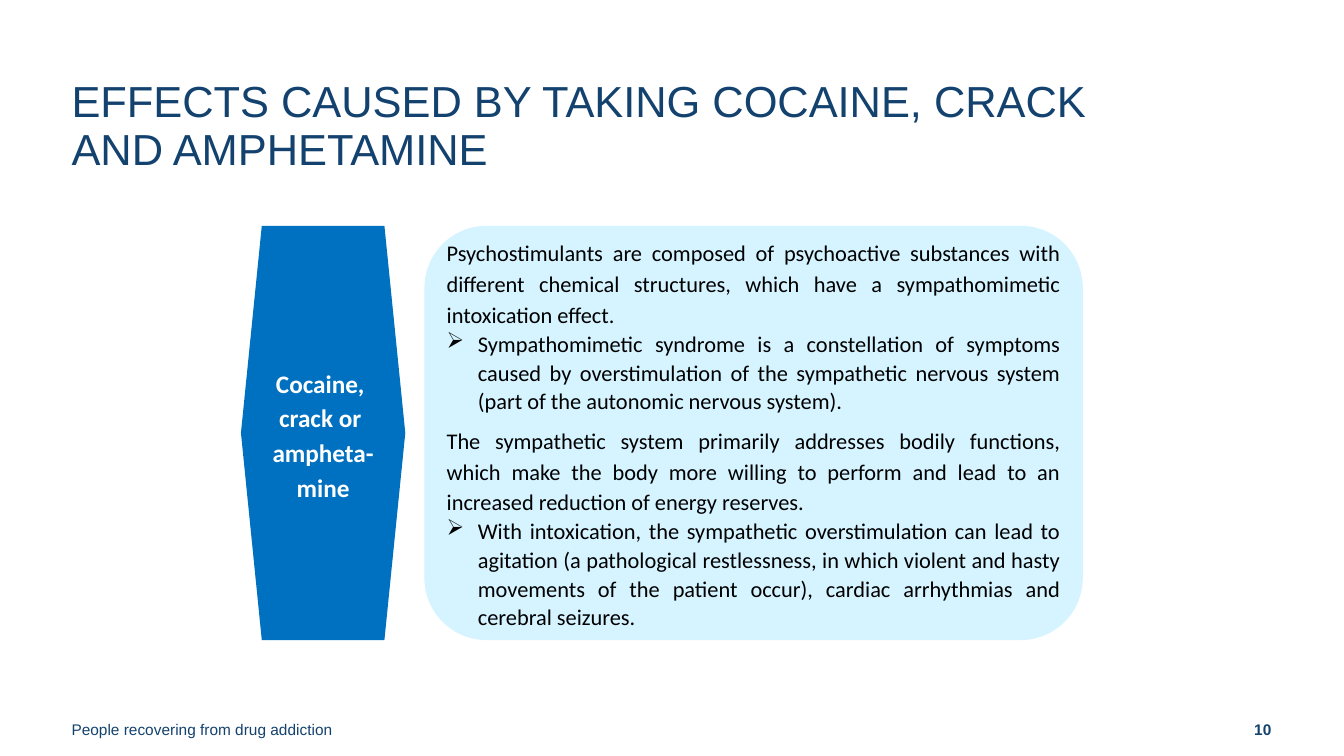
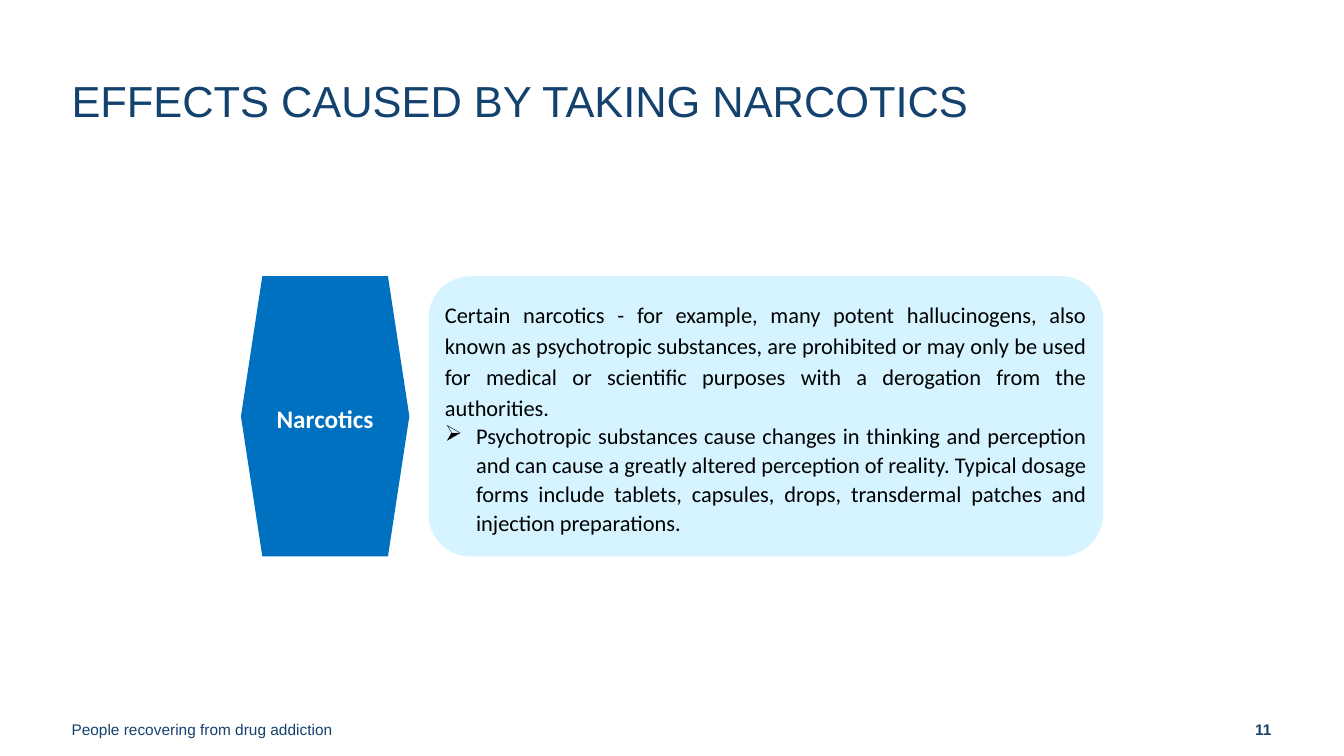
import dataclasses

import pptx
import pptx.dml.color
import pptx.enum.shapes
import pptx.enum.text
import pptx.util
from lxml import etree

Inches = pptx.util.Inches
Pt = pptx.util.Pt
Align = pptx.enum.text.PP_ALIGN
Anchor = pptx.enum.text.MSO_ANCHOR
Shape = pptx.enum.shapes.MSO_SHAPE


@dataclasses.dataclass(frozen=True)
class Theme:
    navy: str = "13426F"
    blue: str = "0070C0"
    pale_blue: str = "D5F4FF"
    white: str = "FFFFFF"
    black: str = "000000"
    heading_font: str = "Arial"
    body_font: str = "Calibri"
    title_size: int = 31
    label_size: int = 18
    body_size: int = 16
    footer_size: int = 11


THEME = Theme()
FOOTER = "People recovering from drug addiction"
TOPIC_LEFT = 2.39
PANEL_GAP = 0.19


def rgb(color):
    return pptx.dml.color.RGBColor.from_string(color)


def write(para, text, *, size, color, font, bold=False, align=Align.LEFT,
          spacing=1.0, before=0, bullet=None, indent=0.31):
    """Fill a paragraph; a vertical tab in the text is a line break."""
    para.text = text
    para.alignment = align
    para.line_spacing = spacing
    if before:
        para.space_before = Pt(before)
    if bullet:
        props = para._p.get_or_add_pPr()
        props.set("marL", str(Inches(indent)))
        props.set("indent", str(-Inches(indent)))
        mark = etree.SubElement(props, pptx.oxml.ns.qn("a:buChar"))
        mark.set("char", bullet)
    for span in para.runs:
        span.font.name = font
        span.font.size = Pt(size)
        span.font.bold = bold
        span.font.color.rgb = rgb(color)


class Builder:
    def __init__(self, theme):
        self.theme = theme
        self.deck = pptx.Presentation()
        self.deck.slide_width = Inches(13.33)
        self.deck.slide_height = Inches(7.5)
        self.page = None

    def frame(self, box, anchor, insets):
        """Set up the text frame of a box; insets run left, top, right, bottom."""
        frame = box.text_frame
        frame.word_wrap = True
        frame.auto_size = pptx.enum.text.MSO_AUTO_SIZE.NONE
        frame.vertical_anchor = anchor
        (frame.margin_left, frame.margin_top,
         frame.margin_right, frame.margin_bottom) = map(Inches, insets)
        return frame

    def start_page(self, title, number):
        self.page = self.deck.slides.add_slide(self.deck.slide_layouts[5])
        self.footer(FOOTER, 0, 4.5, (0.71, 0.05, 0, 0.16))
        self.footer(str(number), 10.32, 3, (0, 0.05, 0.71, 0.16),
                    bold=True, align=Align.RIGHT)
        self.title(title)

    def title(self, text):
        box = self.page.shapes.title
        box.left, box.top = Inches(0.71), Inches(0.73)
        box.width, box.height = Inches(10.8), Inches(1.12)
        frame = self.frame(box, Anchor.TOP, (0, 0.05, 0.1, 0.05))
        write(frame.paragraphs[0], text, size=self.theme.title_size,
              color=self.theme.navy, font=self.theme.heading_font,
              spacing=Pt(34))

    def footer(self, text, left, width, insets, **style):
        box = self.page.shapes.add_textbox(
            Inches(left), Inches(6.89), Inches(width), Inches(0.6))
        frame = self.frame(box, Anchor.BOTTOM, insets)
        write(frame.paragraphs[0], text, size=self.theme.footer_size,
              color=self.theme.navy, font=self.theme.heading_font,
              spacing=Pt(13.3), **style)

    def block(self, kind, left, top, width, height, fill, adjustment):
        box = self.page.shapes.add_shape(
            kind, Inches(left), Inches(top), Inches(width), Inches(height))
        box.adjustments[0] = adjustment
        box.shadow.inherit = False
        box.fill.solid()
        box.fill.fore_color.rgb = rgb(fill)
        box.line.fill.background()
        return box

    def topic(self, text, top, width, height):
        box = self.block(Shape.HEXAGON, TOPIC_LEFT, top, width, height,
                         self.theme.blue, 0.127)
        frame = self.frame(box, Anchor.MIDDLE, (0.1, 0.05, 0.1, 0.05))
        write(frame.paragraphs[0], text, size=self.theme.label_size,
              color=self.theme.white, font=self.theme.body_font, bold=True,
              align=Align.CENTER, spacing=1.15)

    def panel(self, sections, left, top, width, height):
        """Draw a panel of sections, each a statement and a bulleted detail."""
        box = self.block(Shape.ROUNDED_RECTANGLE, left, top, width, height,
                         self.theme.pale_blue, 0.15)
        frame = self.frame(box, Anchor.MIDDLE, (0.04,) * 4)
        style = dict(size=self.theme.body_size, color=self.theme.black,
                     font=self.theme.body_font, align=Align.JUSTIFY)
        for index, (statement, detail) in enumerate(sections):
            para = frame.add_paragraph() if index else frame.paragraphs[0]
            write(para, statement, spacing=1.15, before=6 if index else 0,
                  **style)
            write(frame.add_paragraph(), detail, spacing=1.07, bullet="➢",
                  **style)

    def effects_page(self, title, number, topic, sections, top, height,
                     topic_width, panel_width):
        self.start_page(title, number)
        self.topic(topic, top, topic_width, height)
        self.panel(sections, TOPIC_LEFT + topic_width + PANEL_GAP, top,
                   panel_width, height)


def main():
    builder = Builder(THEME)

    # Stimulants
    builder.effects_page(
        "EFFECTS CAUSED BY TAKING COCAINE, CRACK AND AMPHETAMINE", 10,
        "Cocaine, \vcrack or \vampheta-mine",
        [("Psychostimulants are composed of psychoactive substances with "
          "different chemical structures, which have a sympathomimetic "
          "intoxication effect.",
          "Sympathomimetic syndrome is a constellation of symptoms caused by "
          "overstimulation of the sympathetic nervous system (part of the "
          "autonomic nervous system)."),
         ("The sympathetic system primarily addresses bodily functions, which "
          "make the body more willing to perform and lead to an increased "
          "reduction of energy reserves.",
          "With intoxication, the sympathetic overstimulation can lead to "
          "agitation (a pathological restlessness, in which violent and hasty "
          "movements of the patient occur), cardiac arrhythmias and cerebral "
          "seizures.")],
        top=2.24, height=4.11, topic_width=1.63, panel_width=6.53)

    # Narcotics
    builder.effects_page(
        "EFFECTS CAUSED BY TAKING NARCOTICS", 11,
        "Narcotics",
        [("Certain narcotics - for example, many potent hallucinogens, also "
          "known as psychotropic substances, are prohibited or may only be "
          "used for medical or scientific purposes with a derogation from the "
          "authorities.",
          "Psychotropic substances cause changes in thinking and perception "
          "and can cause a greatly altered perception of reality. Typical "
          "dosage forms include tablets, capsules, drops, transdermal patches "
          "and injection preparations.")],
        top=2.74, height=2.78, topic_width=1.67, panel_width=6.69)

    builder.deck.save("out.pptx")


if __name__ == "__main__":
    main()
